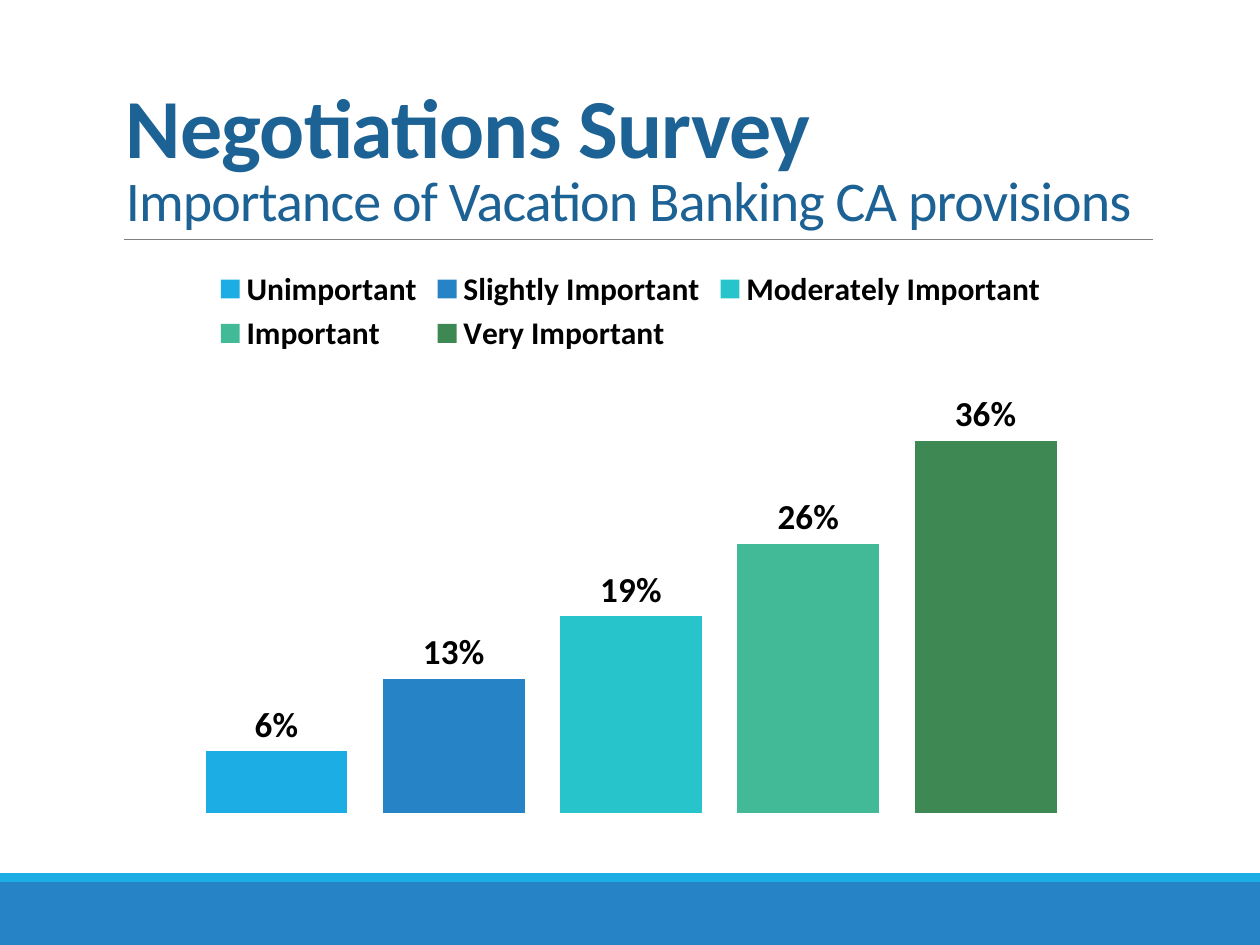
from lxml import etree
from pptx import Presentation
from pptx.chart import data
from pptx.dml.color import RGBColor
from pptx.enum import chart as ch, shapes, text
from pptx.oxml import ns
from pptx.util import Pt

FONT = "Calibri"
COLORS = {
    "title": "1D6294", "rule": "808080", "text": "000000",
    "footer": "2683C6", "stripe": "1CADE4",
    "Unimportant": "1CADE4", "Slightly Important": "2683C6",
    "Moderately Important": "28C4CC", "Important": "42BA97",
    "Very Important": "3E8853",
}
RATINGS = {
    "Unimportant": 0.06, "Slightly Important": 0.13,
    "Moderately Important": 0.19, "Important": 0.26, "Very Important": 0.36,
}
PLOT_AREA = {"x": 0.031, "y": 0.248, "w": 0.939, "h": 0.71}


def color(name):
    return RGBColor.from_string(COLORS[name])


def style_font(font, size, name, bold=False):
    font.name, font.size, font.bold = FONT, Pt(size), bold
    font.color.rgb = color(name)


def add_band(s, top, height, name):
    sp = s.shapes.add_shape(shapes.MSO_SHAPE.RECTANGLE,
                            Pt(0), Pt(top), Pt(720), Pt(height))
    sp.shadow.inherit = False
    sp.fill.solid()
    sp.fill.fore_color.rgb = color(name)
    sp.line.fill.background()


def add_rule(s, left, right, y):
    line = s.shapes.add_connector(shapes.MSO_CONNECTOR.STRAIGHT,
                                  Pt(left), Pt(y), Pt(right), Pt(y))
    line.line.color.rgb = color("rule")
    line.line.width = Pt(0.5)
    etree.SubElement(line._element.spPr, ns.qn("a:effectLst"))


def add_title(s, heading, subheading):
    tf = s.shapes.add_textbox(Pt(64.8), Pt(22.3), Pt(594), Pt(114.5)).text_frame
    tf.word_wrap = True
    tf.vertical_anchor = text.MSO_ANCHOR.BOTTOM
    p = tf.paragraphs[0]
    p.text = f"{heading}\v{subheading}"
    p.line_spacing = 0.85
    for r, size, bold in zip(p.runs, (48, 32), (True, False)):
        style_font(r.font, size, "title", bold)
        r._r.get_or_add_rPr().set("spc", "-50")


def set_plot_area(chart):
    area = chart._chartSpace.chart.plotArea
    for old in area.findall(ns.qn("c:layout")):
        area.remove(old)
    layout = etree.Element(ns.qn("c:layout"))
    manual = etree.SubElement(layout, ns.qn("c:manualLayout"))
    settings = {"layoutTarget": "inner", "xMode": "edge", "yMode": "edge", **PLOT_AREA}
    for tag, value in settings.items():
        etree.SubElement(manual, ns.qn(f"c:{tag}")).set("val", str(value))
    area.insert(0, layout)


def add_rating_chart(s):
    cd = data.CategoryChartData(number_format="0%")
    cd.categories = ["1"]
    for name, share in RATINGS.items():
        cd.add_series(name, [share])
    chart = s.shapes.add_chart(ch.XL_CHART_TYPE.COLUMN_CLUSTERED, Pt(36.7), Pt(145.4),
                               Pt(647.3), Pt(333.4), cd).chart
    chart.has_title = False
    style_font(chart.font, 10, "text")
    set_plot_area(chart)

    # Hidden axes
    chart.value_axis.minimum_scale = 0
    chart.value_axis.maximum_scale = 0.4
    chart.value_axis.has_major_gridlines = False
    chart.value_axis.visible = chart.category_axis.visible = False

    # Legend
    chart.has_legend = True
    chart.legend.position = ch.XL_LEGEND_POSITION.TOP
    chart.legend.include_in_layout = False
    style_font(chart.legend.font, 18, "text", True)

    # Columns and labels
    plot = chart.plots[0]
    plot.gap_width, plot.overlap, plot.vary_by_categories = 150, -25, False
    for series in plot.series:
        series.format.fill.solid()
        series.format.fill.fore_color.rgb = color(series.name)
        labels = series.data_labels
        labels.show_value = True
        labels.number_format, labels.number_format_is_linked = "0%", False
        labels.position = ch.XL_LABEL_POSITION.OUTSIDE_END
        style_font(labels.font, 20, "text", True)


def main():
    prs = Presentation()
    prs.slide_width, prs.slide_height = Pt(720), Pt(540)
    s = prs.slides.add_slide(prs.slide_layouts[6])

    # Footer bands
    add_band(s, 504, 36, "footer")
    add_band(s, 499, 5, "stripe")

    # Heading
    add_rule(s, 70.6, 658.8, 136.8)
    add_title(s, "Negotiations Survey", "Importance of Vacation Banking CA provisions")

    # Survey results
    add_rating_chart(s)
    prs.save("out.pptx")


if __name__ == "__main__":
    main()
